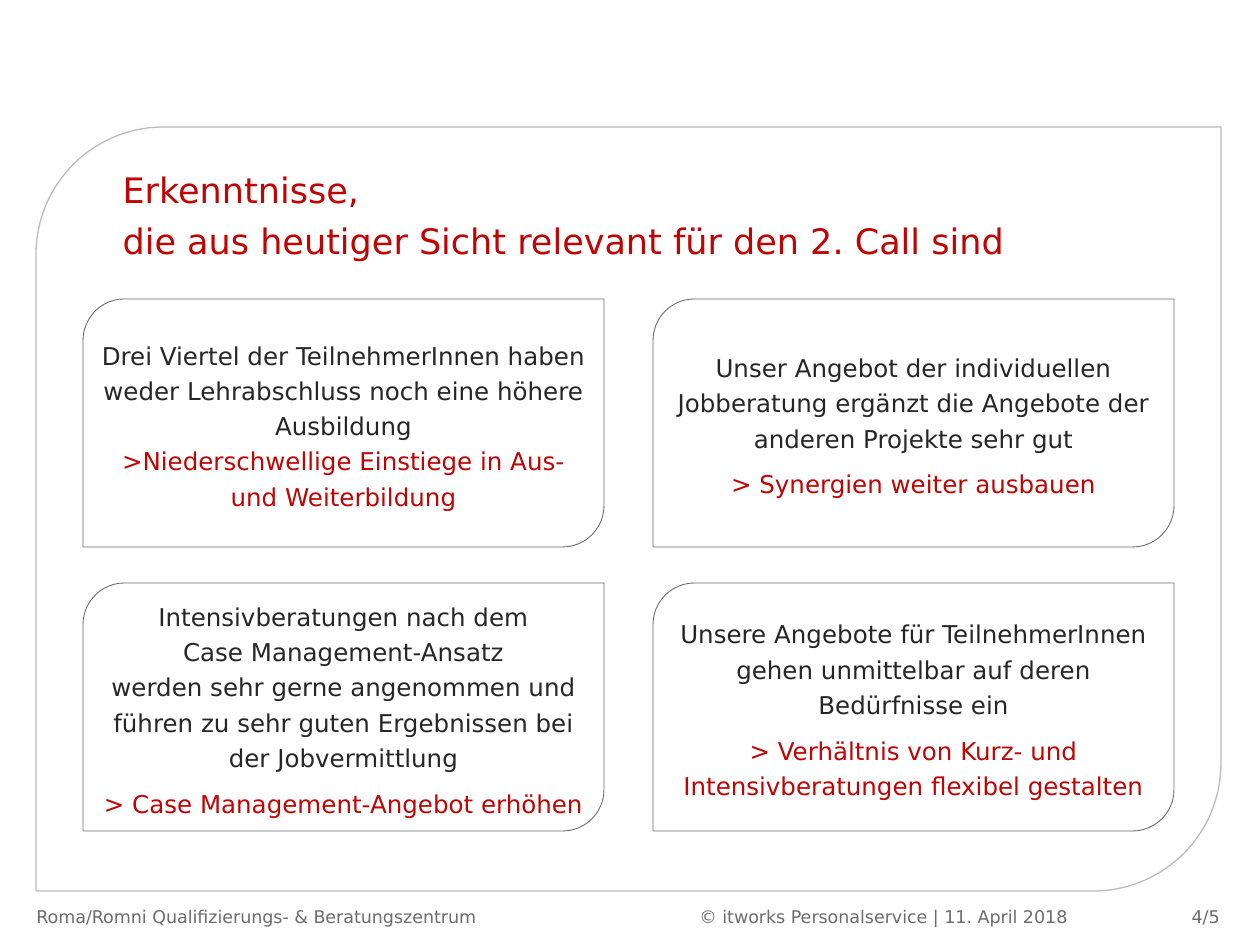
import pptx
import pptx.dml.color
import pptx.enum.shapes
import pptx.enum.text
import pptx.oxml
import pptx.oxml.ns
import pptx.util

RGBColor = pptx.dml.color.RGBColor
PP_ALIGN = pptx.enum.text.PP_ALIGN
MSO_ANCHOR = pptx.enum.text.MSO_ANCHOR

WHITE = RGBColor(0xFF, 0xFF, 0xFF)
LIGHT_GRAY = RGBColor(0xBB, 0xBB, 0xBB)
GRAY = RGBColor(0x6C, 0x6C, 0x6C)
DARK = RGBColor(0x26, 0x26, 0x26)
RED = RGBColor(0xC0, 0x03, 0x03)

FONT = "DejaVu Sans"
PX_PER_INCH = 126

TITLE = ["Erkenntnisse,", "die aus heutiger Sicht relevant für den 2. Call sind"]

# Each card: finding paragraphs, conclusion, space before the conclusion in points
CARDS = [
    (["Drei Viertel der TeilnehmerInnen haben weder Lehrabschluss noch eine höhere Ausbildung"],
     ">Niederschwellige Einstiege in Aus- und Weiterbildung", 0),
    (["Unser Angebot der individuellen Jobberatung ergänzt die Angebote der anderen Projekte sehr gut"],
     "> Synergien weiter ausbauen", 6),
    (["Intensivberatungen nach dem",
      "Case Management-Ansatz",
      "werden sehr gerne angenommen und führen zu sehr guten Ergebnissen bei der Jobvermittlung"],
     "> Case Management-Angebot erhöhen", 6),
    (["Unsere Angebote für TeilnehmerInnen gehen unmittelbar auf deren Bedürfnisse ein"],
     "> Verhältnis von Kurz- und Intensivberatungen flexibel gestalten", 6),
]


def px(n):
    return pptx.util.Emu(round(n * 914400 / PX_PER_INCH))


def add_text(tf, text, size, color, align=PP_ALIGN.LEFT, spacing=None, before=0):
    """Fill the empty first paragraph of tf, or append a new one."""
    p = tf.paragraphs[0] if not tf.text else tf.add_paragraph()
    p.alignment = align
    if spacing:
        p.line_spacing = spacing
    if before:
        p.space_before = pptx.util.Pt(before)
    r = p.add_run()
    r.text = text
    r.font.size = pptx.util.Pt(size)
    r.font.name = FONT
    r.font.color.rgb = color


def add_leaf(slide, box, line_color, line_width, radius):
    """Rectangle with two opposite rounded corners."""
    shape_type = pptx.enum.shapes.MSO_SHAPE.ROUND_2_DIAG_RECTANGLE
    sp = slide.shapes.add_shape(shape_type, *map(px, box))
    sp.adjustments[0] = radius
    sp.adjustments[1] = 0
    sp.shadow.inherit = False
    sp.fill.background()
    sp.line.color.rgb = line_color
    sp.line.width = pptx.util.Pt(line_width)
    return sp


def add_panel(slide, box):
    sp = add_leaf(slide, box, LIGHT_GRAY, 0.75, 0.167)
    sp.fill.solid()
    sp.fill.fore_color.rgb = WHITE
    color = sp.fill._xPr.find(".//" + pptx.oxml.ns.qn("a:srgbClr"))
    color.append(pptx.oxml.parse_xml(
        f'<a:alpha {pptx.oxml.ns.nsdecls("a")} val="50000"/>'))
    slide.shapes._spTree.insert(2, sp._element)  # behind the title


def add_title(slide, box):
    sp = slide.shapes.title
    sp.left, sp.top, sp.width, sp.height = map(px, box)
    tf = sp.text_frame
    tf.vertical_anchor = MSO_ANCHOR.TOP
    tf.auto_size = pptx.enum.text.MSO_AUTO_SIZE.NONE
    for line in TITLE:
        add_text(tf, line, 20, RED, spacing=1.2)


def add_card(slide, box, findings, conclusion, before):
    tf = add_leaf(slide, box, GRAY, 0.5, 0.167).text_frame
    tf.word_wrap = True
    tf.vertical_anchor = MSO_ANCHOR.MIDDLE
    tf.margin_left = tf.margin_right = tf.margin_top = tf.margin_bottom = px(5)
    for finding in findings:
        add_text(tf, finding, 14, DARK, align=PP_ALIGN.CENTER, spacing=1.2)
    add_text(tf, conclusion, 14, RED, align=PP_ALIGN.CENTER, spacing=1.2, before=before)


def add_card_grid(slide, box, gap_x, gap_y):
    left, top, width, height = box
    w, h = (width - gap_x) // 2, (height - gap_y) // 2
    for i, card in enumerate(CARDS):
        row, col = divmod(i, 2)
        add_card(slide, (left + col * (w + gap_x), top + row * (h + gap_y), w, h), *card)


def add_footer(slide, box):
    left, top, width, height = box
    parts = [
        ("Roma/Romni Qualifizierungs- & Beratungszentrum", 0, 561, PP_ALIGN.LEFT),
        ("© itworks Personalservice | 11. April 2018", 663, 473, PP_ALIGN.LEFT),
        ("4/5", width - 107, 107, PP_ALIGN.RIGHT),
    ]
    for text, x, w, align in parts:
        sp = slide.shapes.add_textbox(px(left + x), px(top), px(w), px(height))
        sp.text_frame.word_wrap = True
        sp.text_frame.vertical_anchor = MSO_ANCHOR.TOP
        add_text(sp.text_frame, text, 10, GRAY, align=align)


def main():
    prs = pptx.Presentation()
    prs.slide_width, prs.slide_height = px(1260), px(945)
    slide = prs.slides.add_slide(prs.slide_layouts[5])
    add_panel(slide, (36, 127, 1185, 764))
    add_title(slide, (110, 154, 1111, 110))
    add_card_grid(slide, (83, 299, 1091, 532), gap_x=49, gap_y=36)
    add_footer(slide, (24, 900, 1208, 44))
    prs.save("out.pptx")


if __name__ == "__main__":
    main()
